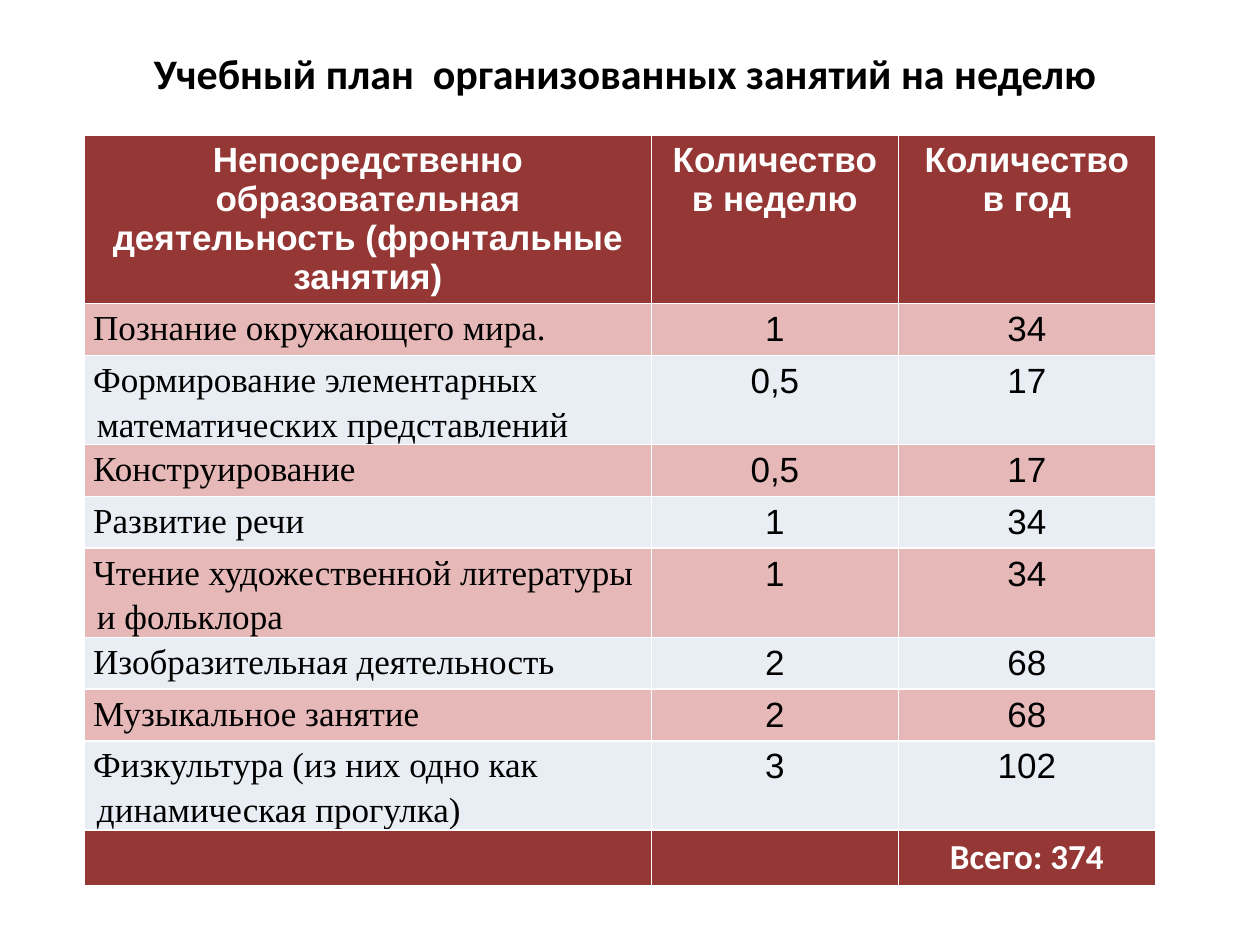
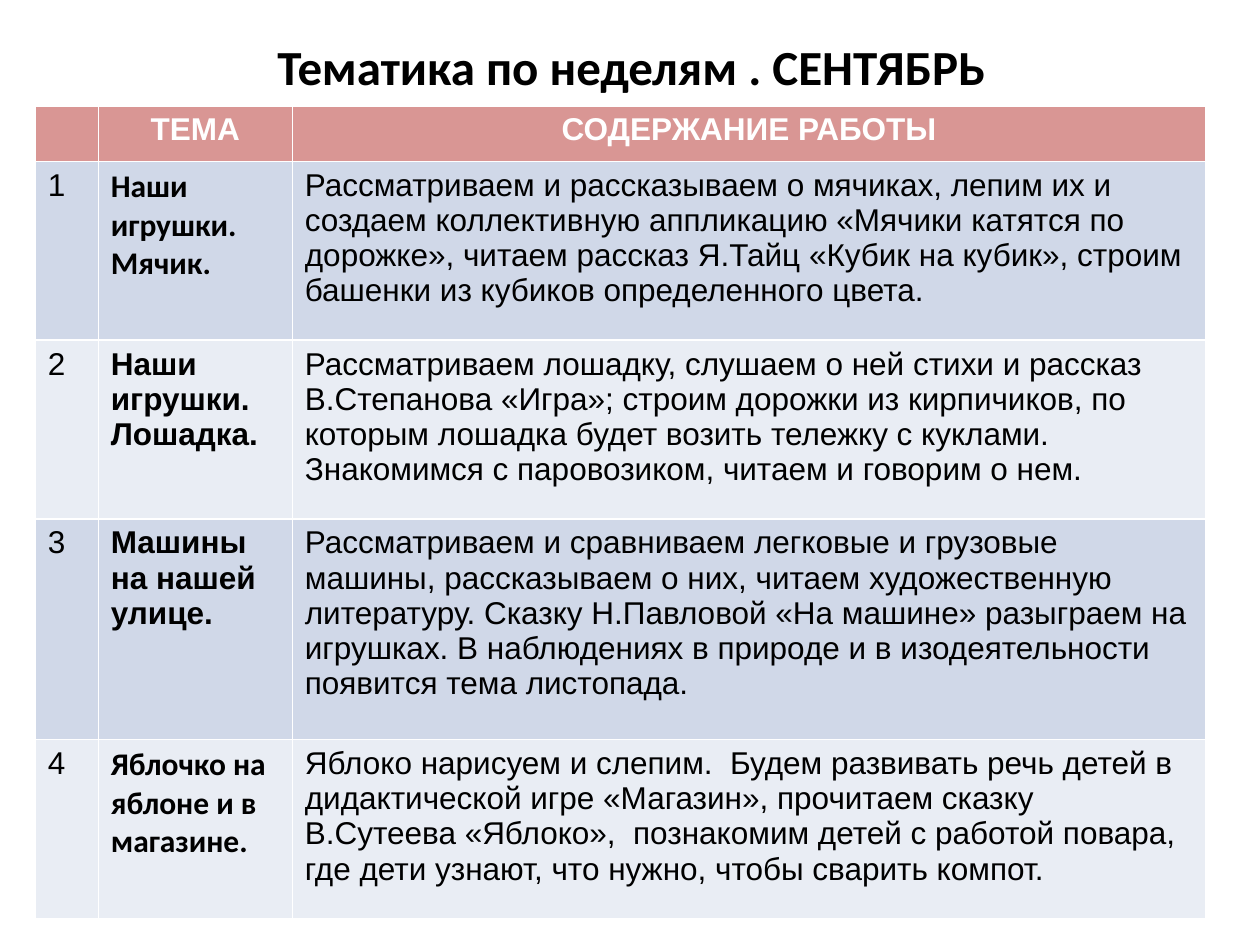
"""Build two kindergarten planning slides: the weekly plan and the September topics."""
import pptx
import pptx.util
import pptx.dml.color
import pptx.enum.text

Inches = pptx.util.Inches
ALIGN = pptx.enum.text.PP_ALIGN
COLORS = {
    "black": "000000", "white": "FFFFFF", "wine": "953735", "rose": "D99694",
    "pink": "E6B9B8", "blue": "D0D8E8", "pale": "E9EDF4",
}

PLAN = [
    ("Познание окружающего мира.", "1", "34"),
    ("Формирование элементарных математических представлений", "0,5", "17"),
    ("Конструирование", "0,5", "17"),
    ("Развитие речи", "1", "34"),
    ("Чтение художественной литературы и фольклора", "1", "34"),
    ("Изобразительная деятельность", "2", "68"),
    ("Музыкальное занятие", "2", "68"),
    ("Физкультура (из них одно как динамическая прогулка)", "3", "102"),
]
TOPICS = [
    ("Наши игрушки. Мячик.", "Calibri",
     "Рассматриваем и рассказываем о мячиках, лепим их и создаем коллективную "
     "аппликацию «Мячики катятся по дорожке», читаем рассказ Я.Тайц «Кубик на "
     "кубик», строим башенки из кубиков определенного цвета."),
    ("Наши игрушки.\nЛошадка.", "Arial",
     "Рассматриваем лошадку, слушаем о ней стихи и рассказ В.Степанова «Игра»; "
     "строим дорожки из кирпичиков, по которым лошадка будет возить тележку с "
     "куклами.  Знакомимся с паровозиком, читаем и говорим о нем."),
    ("Машины на нашей улице.", "Arial",
     "Рассматриваем и сравниваем легковые и грузовые машины, рассказываем о них, "
     "читаем художественную литературу. Сказку Н.Павловой «На машине» разыграем "
     "на игрушках. В наблюдениях в природе и в изодеятельности появится тема "
     "листопада."),
    ("Яблочко на яблоне и в магазине.", "Calibri",
     "Яблоко нарисуем и слепим.  Будем развивать речь детей в дидактической игре "
     "«Магазин», прочитаем сказку В.Сутеева «Яблоко»,  познакомим детей с работой "
     "повара, где дети узнают, что нужно, чтобы сварить компот."),
]


class Deck:
    """Hold the shared style and the current slide."""

    def __init__(self):
        """Start an empty 4:3 deck."""
        self.prs = pptx.Presentation()
        self.prs.slide_width = Inches(10)
        self.prs.slide_height = Inches(7.5)
        self.slide = None

    def label(self, frame, text, size, font="Arial", color="black", bold=False, align=None):
        """Put styled text in a frame."""
        frame.text = text
        for para in frame.paragraphs:
            para.alignment = align
            for run in para.runs:
                run.font.size = pptx.util.Pt(size)
                run.font.name = font
                run.font.bold = bold
                run.font.color.rgb = pptx.dml.color.RGBColor.from_string(COLORS[color])

    def title(self, text, box, size):
        """Add a slide and fill its title."""
        self.slide = self.prs.slides.add_slide(self.prs.slide_layouts[5])
        head = self.slide.shapes.title
        head.left, head.top, head.width, head.height = map(Inches, box)
        frame = head.text_frame
        frame.auto_size = pptx.enum.text.MSO_AUTO_SIZE.NONE
        frame.vertical_anchor = pptx.enum.text.MSO_ANCHOR.MIDDLE
        self.label(frame, text, size, "Calibri", bold=True, align=ALIGN.CENTER)

    def table(self, box, cols, rows):
        """Add a table with the given column widths and row heights."""
        frame = self.slide.shapes.add_table(len(rows), len(cols), *map(Inches, box))
        grid = frame.table
        for col, width in zip(grid.columns, cols):
            col.width = Inches(width)
        for row, height in zip(grid.rows, rows):
            row.height = Inches(height)
        frame.height = Inches(box[3])
        return grid

    def fill(self, grid, row, color):
        """Paint every cell of one row."""
        for cell in grid.rows[row].cells:
            cell.fill.solid()
            cell.fill.fore_color.rgb = pptx.dml.color.RGBColor.from_string(COLORS[color])

    def header(self, grid, names, size, color):
        """Fill the top row with centred names."""
        self.fill(grid, 0, color)
        for col, name in enumerate(names):
            self.label(grid.cell(0, col).text_frame, name, size,
                       color="white", bold=True, align=ALIGN.CENTER)

    def lesson(self, cell, text, size):
        """Set a lesson name with a small hanging indent."""
        cell.margin_left = cell.margin_right = Inches(0.07)
        cell.margin_top = cell.margin_bottom = 0
        self.label(cell.text_frame, text, size, "Times New Roman")
        para = cell.text_frame.paragraphs[0]
        para.line_spacing = 1.15
        props = para._p.get_or_add_pPr()
        props.set("marL", str(Inches(0.03)))
        props.set("indent", str(Inches(-0.03)))


def plan(deck):
    """Build the weekly plan slide."""
    size = 20
    deck.title("Учебный план  организованных занятий на неделю ", (0.5, 0.3, 9, 0.56), 24)
    last = len(PLAN) + 1
    grid = deck.table((0.67, 1.07, 8.5, 6), (4.5, 1.96, 2.04), [1.03] + [0.35] * last)
    names = ("Непосредственно образовательная деятельность (фронтальные занятия)",
             "Количество в неделю", "Количество в год")
    deck.header(grid, names, size, "wine")
    for row, (name, *counts) in enumerate(PLAN, 1):
        deck.fill(grid, row, "pink" if row % 2 else "pale")
        deck.lesson(grid.cell(row, 0), name, size)
        for col, count in enumerate(counts, 1):
            deck.label(grid.cell(row, col).text_frame, count, size, align=ALIGN.CENTER)
    deck.fill(grid, last, "wine")
    deck.label(grid.cell(last, 2).text_frame, "Всего: 374", size, "Calibri",
               "white", True, ALIGN.CENTER)


def topics(deck):
    """Build the September topics slide."""
    size = 18
    deck.title("Тематика по неделям . СЕНТЯБРЬ", (0.51, 0.29, 9, 0.47), 28)
    grid = deck.table((0.28, 0.84, 9.29, 6.46), (0.5, 1.54, 7.25),
                      (0.44, 1.42, 1.42, 1.75, 1.42))
    deck.header(grid, ("", "ТЕМА", "СОДЕРЖАНИЕ РАБОТЫ"), size, "rose")
    for row, (name, font, work) in enumerate(TOPICS, 1):
        deck.fill(grid, row, "blue" if row % 2 else "pale")
        deck.label(grid.cell(row, 0).text_frame, str(row), size)
        deck.label(grid.cell(row, 1).text_frame, name, size, font, bold=True)
        deck.label(grid.cell(row, 2).text_frame, work, size)


def main():
    """Build and save the deck."""
    deck = Deck()
    plan(deck)
    topics(deck)
    deck.prs.save("out.pptx")


if __name__ == "__main__":
    main()
